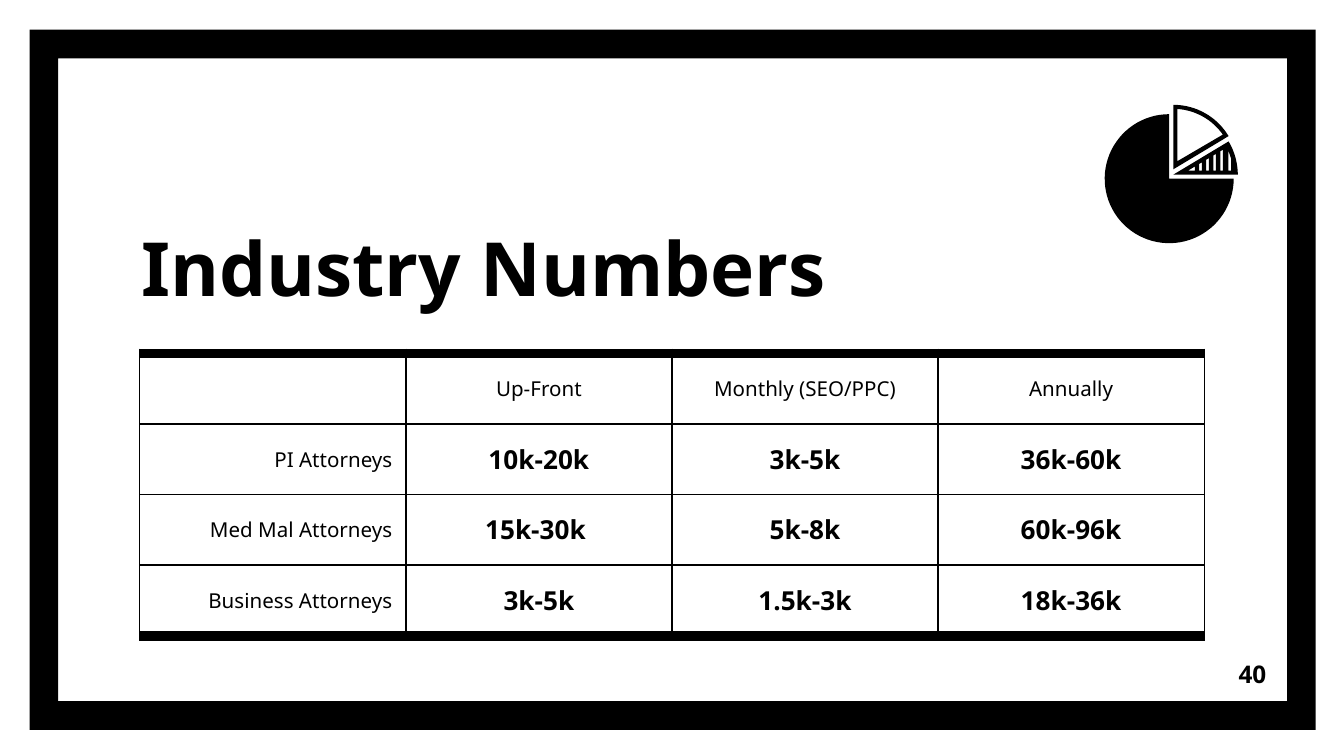
from math import cos, radians, sin

from lxml import etree
from pptx import Presentation
from pptx.dml.color import RGBColor
from pptx.enum.shapes import MSO_SHAPE
from pptx.enum.text import MSO_ANCHOR, MSO_AUTO_SIZE, PP_ALIGN
from pptx.oxml.ns import qn
from pptx.util import Inches, Pt

TITLE = "Industry Numbers"
PAGE_NUMBER = "40"
ROWS = [
    ("", "Up-Front", "Monthly (SEO/PPC)", "Annually"),
    ("PI Attorneys", "10k-20k", "3k-5k", "36k-60k"),
    ("Med Mal Attorneys", "15k-30k ", "5k-8k", "60k-96k"),
    ("Business Attorneys", "3k-5k", "1.5k-3k", "18k-36k"),
]
COLORS = {"ink": "000000", "paper": "FFFFFF"}
FONT = "Noto Sans"
FORMATS = {
    "title": {"size": Pt(40), "bold": True},
    "label": {"size": Pt(11), "bold": False},
    "value": {"size": Pt(14), "bold": True},
    "page": {"size": Pt(13), "bold": True},
}
SLIDE_WIDTH = 10
SLIDE_HEIGHT = SLIDE_WIDTH * 9 / 16
TABLE_LEFT, TABLE_TOP = 1.04, 2.63
COLUMN_WIDTH, TABLE_HEIGHT = 1.98, 2.1
THIN, THICK = 0.75, 6
PIE_RADIUS = 0.48


def rgb(name):
    return RGBColor.from_string(COLORS[name])


def write(frame, text, style, alignment, anchor):
    frame.vertical_anchor = anchor
    paragraph = frame.paragraphs[0]
    paragraph.alignment = alignment
    run = paragraph.add_run()
    run.text = text
    for name, value in {"name": FONT, **FORMATS[style]}.items():
        setattr(run.font, name, value)
    run.font.color.rgb = rgb("ink")


def fill_box(frame, *args):
    frame.word_wrap = True
    frame.auto_size = MSO_AUTO_SIZE.NONE
    for side in ("left", "top", "right", "bottom"):
        setattr(frame, f"margin_{side}", Inches(0.1))
    write(frame, *args)


def paint(shape):
    shape.fill.solid()
    shape.fill.fore_color.rgb = rgb("ink")
    shape.line.fill.background()
    shape.shadow.inherit = False


def set_borders(cell, widths):
    properties = cell._tc.get_or_add_tcPr()
    for side, width in widths.items():
        line = etree.SubElement(properties, qn(f"a:ln{side}"), w=str(Pt(width)))
        fill = etree.SubElement(line, qn("a:solidFill"))
        etree.SubElement(fill, qn("a:srgbClr"), val=COLORS["ink"])


def add_table(slide):
    row_count, column_count = len(ROWS), len(ROWS[0])
    table = slide.shapes.add_table(
        row_count, column_count, Inches(TABLE_LEFT), Inches(TABLE_TOP),
        Inches(COLUMN_WIDTH * column_count), Inches(TABLE_HEIGHT),
    ).table
    table.first_row = table.horz_banding = False
    for column in table.columns:
        column.width = Inches(COLUMN_WIDTH)
    for i, row in enumerate(ROWS):
        table.rows[i].height = Inches(TABLE_HEIGHT / row_count)
        for j, text in enumerate(row):
            cell = table.cell(i, j)
            set_borders(cell, {
                "L": THIN, "R": THIN,
                "T": THICK if i == 0 else THIN,
                "B": THICK if i == row_count - 1 else THIN,
            })
            cell.fill.background()
            cell.margin_left = cell.margin_right = Inches(0.1)
            cell.margin_top = cell.margin_bottom = Inches(0.07)
            cell.vertical_anchor = MSO_ANCHOR.MIDDLE
            if text:
                style = "value" if i and j else "label"
                alignment = PP_ALIGN.CENTER if j else PP_ALIGN.RIGHT
                write(cell.text_frame, text, style, alignment, MSO_ANCHOR.MIDDLE)


def arc(x, y, radius, start, end, steps=16):
    """Points on a circle, in degrees clockwise from three o'clock."""
    angles = [radians(start + (end - start) * k / steps) for k in range(steps + 1)]
    return [(x + radius * cos(a), y + radius * sin(a)) for a in angles]


def sector(x, y, start, end, steps=16):
    return [(x, y)] + arc(x, y, PIE_RADIUS, start, end, steps)


def add_outline(shapes, contours):
    """Draw the first contour, with the others cut out of it."""
    builder = None
    for contour in contours:
        first, *rest = [(Inches(x), Inches(y)) for x, y in contour]
        if builder is None:
            builder = shapes.build_freeform(*first)
        else:
            builder.move_to(*first)
        builder.add_line_segments(rest, close=True)
    paint(builder.convert_to_shape())


def striped_slice():
    bottom, slope, tip = 1.27, 0.6, 8.84

    def top(x):
        return bottom - (x - tip) * slope

    gaps = [[(tip, bottom), (8.89, top(8.89)), (8.89, bottom)]]
    for k in range(1, 5):
        right = 8.89 + 0.21 * k / 4
        left = right - 0.02
        gaps.append([(left, bottom), (left, top(left)), (right, top(right)), (right, bottom)])
    gaps.append([(9.14, bottom), (9.14, 1.12), (9.15, 1.15), (9.16, 1.18), (9.16, bottom)])
    return [sector(8.73, 1.3, -31, 0)] + gaps


def add_pie_icon(slide):
    shapes = slide.shapes.add_group_shape().shapes
    hollow = [(8.76, 1.2)] + arc(8.73, 1.26, 0.45, -86, -35)
    add_outline(shapes, [sector(8.7, 1.33, 0, 270, 64)])
    add_outline(shapes, striped_slice())
    add_outline(shapes, [sector(8.73, 1.26, -90, -31), hollow])


def main():
    presentation = Presentation()
    presentation.slide_width = Inches(SLIDE_WIDTH)
    presentation.slide_height = Inches(SLIDE_HEIGHT)
    slide = presentation.slides.add_slide(presentation.slide_layouts[5])
    slide.background.fill.solid()
    slide.background.fill.fore_color.rgb = rgb("paper")

    border = slide.shapes.add_shape(
        MSO_SHAPE.FRAME, Inches(0.22), Inches(0.22), Inches(9.57), Inches(5.21))
    border.adjustments[0] = 0.041
    paint(border)
    slide.shapes._spTree.insert(2, border._element)

    title = slide.shapes.title
    title.left, title.top = Inches(0.95), Inches(0.93)
    title.width, title.height = Inches(5.57), Inches(1.49)
    fill_box(title.text_frame, TITLE, "title", PP_ALIGN.LEFT, MSO_ANCHOR.BOTTOM)

    add_table(slide)
    add_pie_icon(slide)

    page = slide.shapes.add_textbox(Inches(8.92), Inches(4.8), Inches(0.6), Inches(0.43))
    fill_box(page.text_frame, PAGE_NUMBER, "page", PP_ALIGN.RIGHT, MSO_ANCHOR.MIDDLE)
    presentation.save("out.pptx")


if __name__ == "__main__":
    main()
